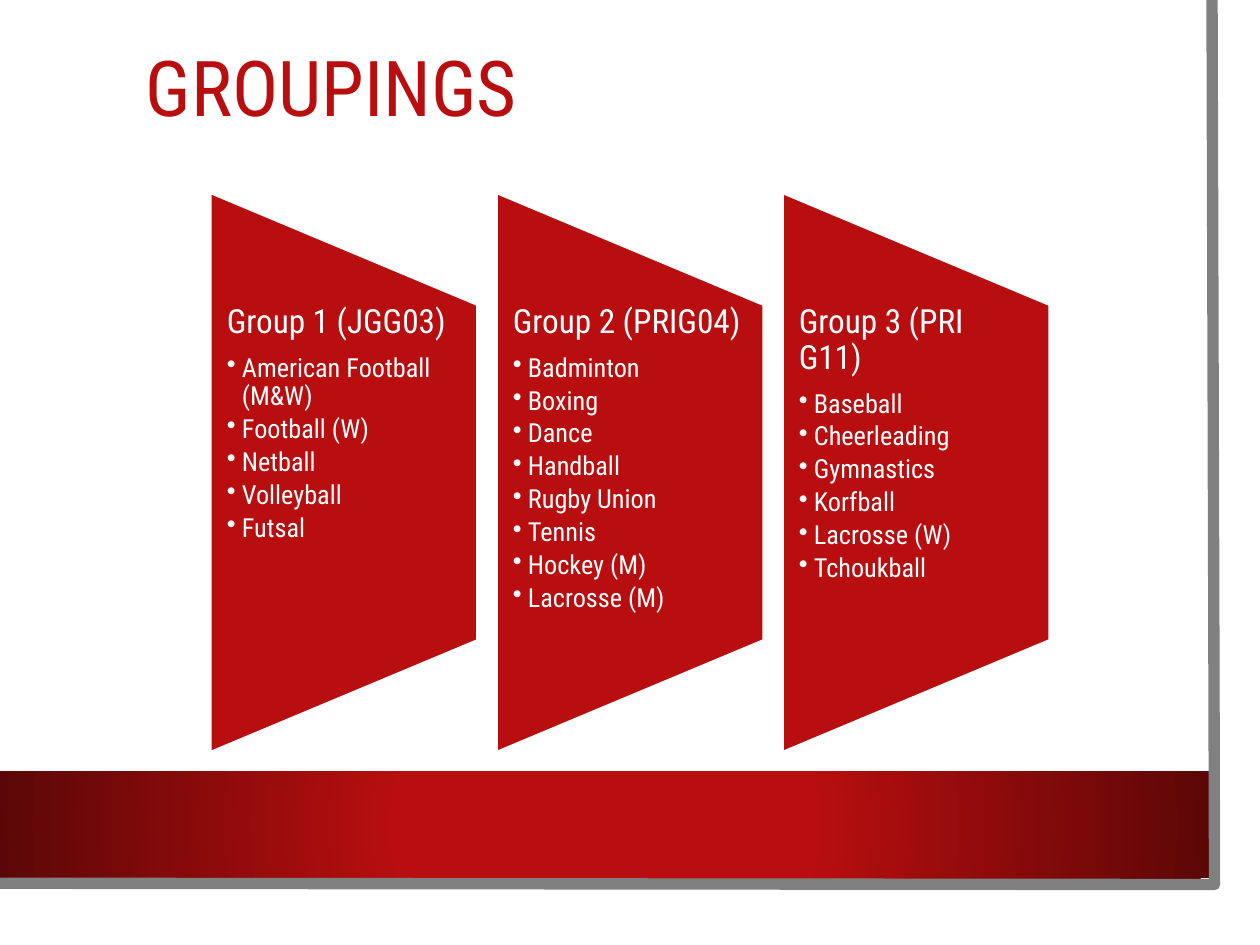
from lxml import etree
from pptx import Presentation
from pptx.dml.color import RGBColor
from pptx.enum.shapes import MSO_SHAPE as SHAPE
from pptx.enum.text import MSO_ANCHOR as ANCHOR
from pptx.oxml.ns import qn
from pptx.util import Inches, Pt

COLORS = {"red": "B80E0F", "dark_red": "5C0707", "gray": "808080", "white": "FFFFFF"}
GROUPS = [
    ("Group 1 (JGG03)",
     ["American Football (M&W)", "Football (W)", "Netball", "Volleyball", "Futsal"]),
    ("Group 2 (PRIG04)",
     ["Badminton", "Boxing", "Dance", "Handball", "Rugby Union", "Tennis",
      "Hockey (M)", "Lacrosse (M)"]),
    ("Group 3 (PRI G11)",
     ["Baseball", "Cheerleading", "Gymnastics", "Korfball", "Lacrosse (W)",
      "Tchoukball"]),
]
PANEL_LEFT, PANEL_STEP = 1.67, 2.27
PANEL_WIDTH, PANEL_HEIGHT = 2.12, 4.44
PANEL_MIDDLE = 3.75


def rgb(name):
    return RGBColor.from_string(COLORS[name])


class SlideBuilder:
    def __init__(self, slide, font="Roboto Condensed"):
        self.shapes = slide.shapes
        self.font = font

    def band(self, x, y, w, h):
        """Draw a bar whose gradient darkens outward from its centre."""
        sp = self.shapes.add_shape(SHAPE.RECTANGLE, Inches(x), Inches(y), Inches(w), Inches(h))
        sp.shadow.inherit = False
        sp.line.fill.background()
        sp.fill.gradient()
        stops = zip(sp.fill.gradient_stops, [("red", 0.34), ("dark_red", 1)])
        for stop, (color, position) in stops:
            stop.color.rgb = rgb(color)
            stop.position = position
        grad = sp._element.spPr.find(qn("a:gradFill"))
        grad.remove(grad.find(qn("a:lin")))
        radial = etree.SubElement(grad, qn("a:path"), path="circle")
        etree.SubElement(radial, qn("a:fillToRect"),
                         {side: "50000" for side in "ltrb"})

    def outline(self, points, color, width):
        (x, y), *rest = points
        builder = self.shapes.build_freeform(Inches(x), Inches(y))
        builder.add_line_segments([(Inches(a), Inches(b)) for a, b in rest], close=False)
        sp = builder.convert_to_shape()
        sp.shadow.inherit = False
        sp.fill.background()
        sp.line.color.rgb = rgb(color)
        sp.line.width = Pt(width)

    def panel(self, x):
        """Draw a trapezoid turned a quarter, so its tall side is on the left."""
        left = x + (PANEL_WIDTH - PANEL_HEIGHT) / 2
        sp = self.shapes.add_shape(
            SHAPE.FLOWCHART_MANUAL_OPERATION, Inches(left),
            Inches(PANEL_MIDDLE - PANEL_WIDTH / 2), Inches(PANEL_HEIGHT), Inches(PANEL_WIDTH))
        sp.rotation = 270
        sp.shadow.inherit = False
        sp.fill.solid()
        sp.fill.fore_color.rgb = rgb("red")
        sp.line.color.rgb = rgb("white")
        sp.line.width = Pt(1.5)

    def text_box(self, x, y, w, h, anchor=ANCHOR.TOP, inset=(0.1, 0.05)):
        tf = self.shapes.add_textbox(Inches(x), Inches(y), Inches(w), Inches(h)).text_frame
        tf.word_wrap = True
        tf.vertical_anchor = anchor
        tf.margin_left = tf.margin_right = Inches(inset[0])
        tf.margin_top = tf.margin_bottom = Inches(inset[1])
        return tf

    def add_text(self, p, text, size, color, after=0, bullet=False):
        if bullet:
            pPr = p._p.get_or_add_pPr()
            pPr.set("marL", str(Inches(0.12)))
            pPr.set("indent", str(Inches(-0.12)))
            etree.SubElement(pPr, qn("a:buChar"), char="•")
        p.line_spacing = 0.9
        p.space_after = Pt(after)
        r = p.add_run()
        r.text = text
        r.font.name = self.font
        r.font.size = Pt(size)
        r.font.color.rgb = rgb(color)

    def title(self, text):
        tf = self.text_box(1.06, 0.14, 7.88, 1.17, ANCHOR.MIDDLE)
        self.add_text(tf.paragraphs[0], text, 44, "red")

    def group(self, x, heading, sports):
        self.panel(x)
        tf = self.text_box(x, 2.42, PANEL_WIDTH, 2.67, inset=(0.13, 0))
        self.add_text(tf.paragraphs[0], heading, 19, "white", after=7.8)
        for sport in sports:
            self.add_text(tf.add_paragraph(), sport, 15, "white", after=2.6, bullet=True)


def main():
    prs = Presentation()
    prs.slide_width, prs.slide_height = Inches(10), Inches(7.5)
    s = SlideBuilder(prs.slides.add_slide(prs.slide_layouts[6]))
    s.band(0, 6.12, 9.6, 0.85)
    s.outline([(9.62, 0), (9.64, 7.02), (-0.02, 7.01)], "gray", 6.5)
    s.title("GROUPINGS")
    for i, (heading, sports) in enumerate(GROUPS):
        s.group(PANEL_LEFT + i * PANEL_STEP, heading, sports)
    prs.save("out.pptx")


if __name__ == "__main__":
    main()
